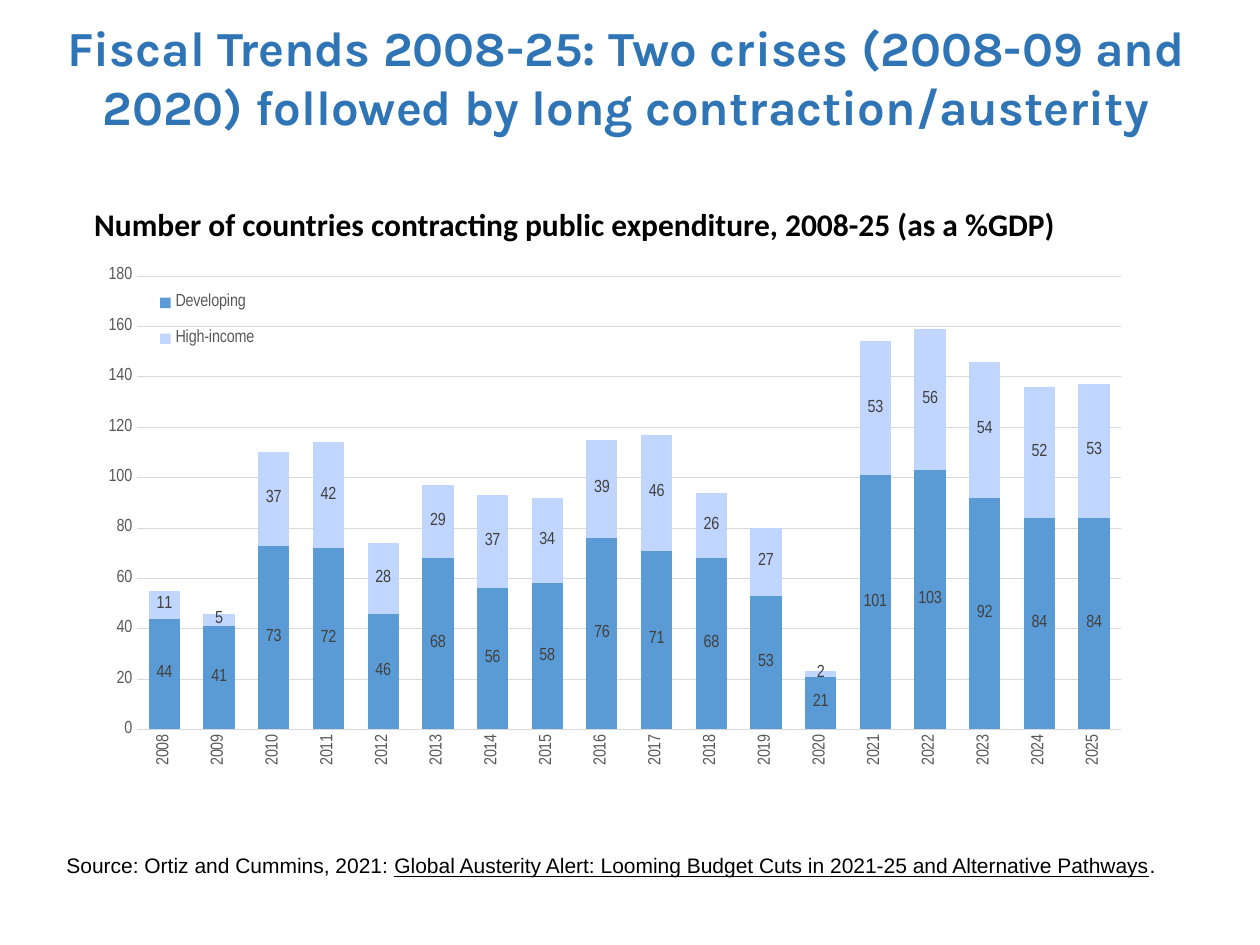
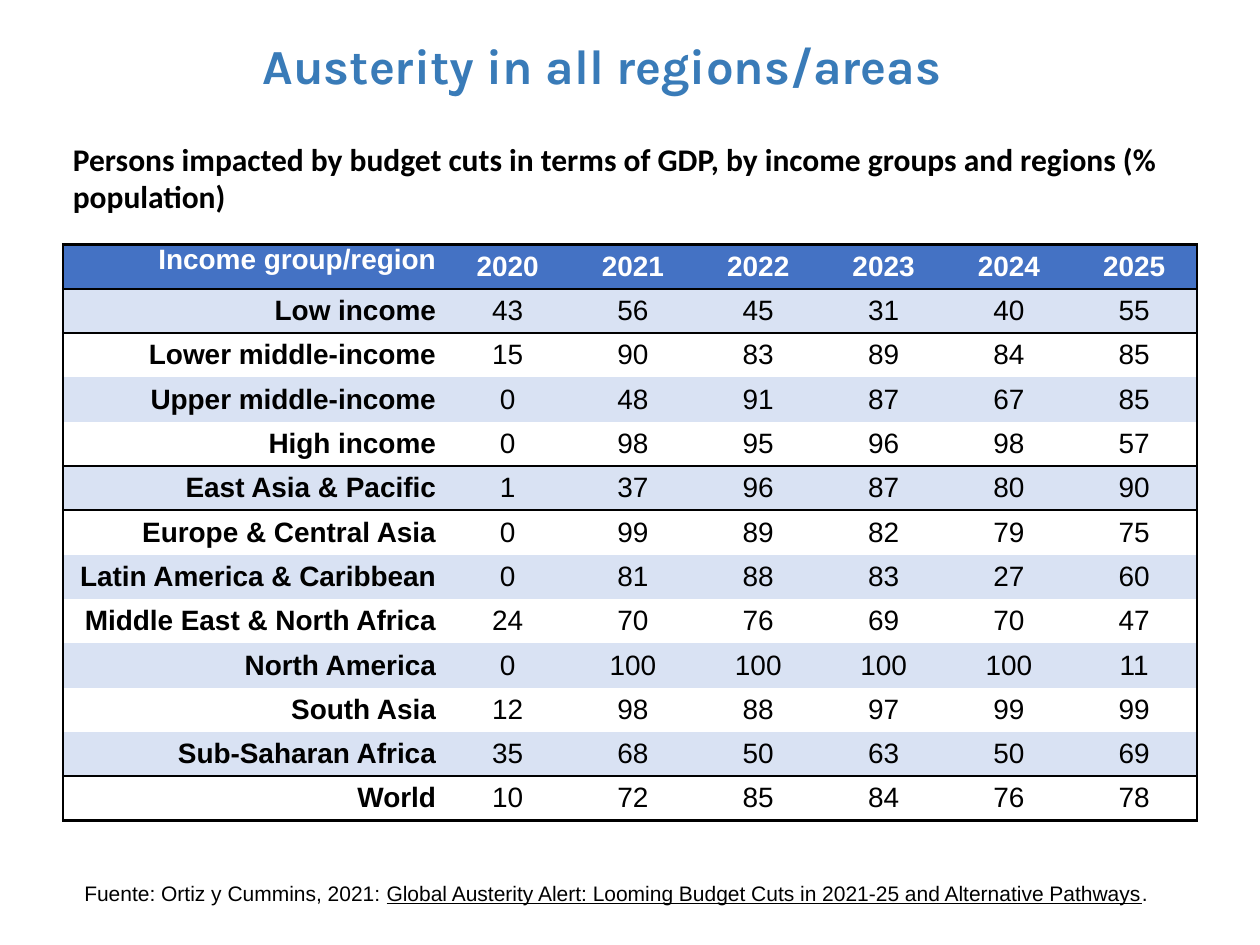
from lxml.etree import SubElement
from pptx import Presentation
from pptx.chart.data import CategoryChartData
from pptx.dml.color import RGBColor
from pptx.enum.chart import XL_CHART_TYPE as ChartType
from pptx.enum.chart import XL_LEGEND_POSITION as LegendSpot
from pptx.enum.chart import XL_TICK_MARK as TickMark
from pptx.enum.text import MSO_ANCHOR as Anchor
from pptx.enum.text import PP_ALIGN as Align
from pptx.oxml import parse_xml
from pptx.oxml.ns import nsdecls, qn
from pptx.util import Cm, Pt

BLACK = RGBColor(0x00, 0x00, 0x00)
WHITE = RGBColor(0xFF, 0xFF, 0xFF)
TITLE_BLUE = RGBColor(0x2F, 0x75, 0xB5)
SOFT_TITLE_BLUE = RGBColor(0x39, 0x7B, 0xB8)
HEADER_BLUE = RGBColor(0x44, 0x72, 0xC4)
BAND_BLUE = RGBColor(0xD9, 0xE2, 0xF3)
DEVELOPING_BLUE = RGBColor(0x5B, 0x9B, 0xD5)
HIGH_INCOME_BLUE = RGBColor(0xC1, 0xD6, 0xFF)
AXIS_GREY = RGBColor(0x59, 0x59, 0x59)
LABEL_GREY = RGBColor(0x40, 0x40, 0x40)
GRID_GREY = RGBColor(0xD9, 0xD9, 0xD9)

TITLE_FONT, SUBTITLE_FONT = "Karla", "Calibri"
BODY_FONT, CHART_FONT = "Arial", "Arial Narrow"

REPORT = ("Global Austerity Alert: Looming Budget Cuts in 2021-25 "
          "and Alternative Pathways")

YEARS = [str(year) for year in range(2008, 2026)]
CONTRACTIONS = [
    ("Developing", DEVELOPING_BLUE,
     (44, 41, 73, 72, 46, 68, 56, 58, 76, 71, 68, 53, 21, 101, 103, 92, 84, 84)),
    ("High-income", HIGH_INCOME_BLUE,
     (11, 5, 37, 42, 28, 29, 37, 34, 39, 46, 26, 27, 2, 53, 56, 54, 52, 53)),
]

IMPACT_ROWS = [
    ("Income group/region", 2020, 2021, 2022, 2023, 2024, 2025),
    ("Low income", 43, 56, 45, 31, 40, 55),
    ("Lower middle-income", 15, 90, 83, 89, 84, 85),
    ("Upper middle-income", 0, 48, 91, 87, 67, 85),
    ("High income", 0, 98, 95, 96, 98, 57),
    ("East Asia & Pacific", 1, 37, 96, 87, 80, 90),
    ("Europe & Central Asia", 0, 99, 89, 82, 79, 75),
    ("Latin America & Caribbean", 0, 81, 88, 83, 27, 60),
    ("Middle East & North Africa", 24, 70, 76, 69, 70, 47),
    ("North America", 0, 100, 100, 100, 100, 11),
    ("South Asia", 12, 98, 88, 97, 99, 99),
    ("Sub-Saharan Africa", 35, 68, 50, 63, 50, 69),
    ("World", 10, 72, 85, 84, 76, 78),
]
RULED_ROWS = {0, 4, 11, 12}  # rows with a line beneath
NO_STYLE = "{2D5ABB26-0587-4C30-8999-92F81FD0307C}"


# Shared text parts
def style_font(font, name, size, colour, bold=False):
    font.name, font.size, font.bold = name, Pt(size), bold
    font.color.rgb = colour


def add_span(para, text, *style, **options):
    span = para.add_run()
    span.text = text
    style_font(span.font, *style, **options)
    return span


def add_text_box(page, box):
    frame = page.shapes.add_textbox(*map(Cm, box)).text_frame
    frame.word_wrap = True
    return frame


def add_title(page, box, text, colour):
    frame = add_text_box(page, box)
    frame.vertical_anchor = Anchor.MIDDLE
    para = frame.paragraphs[0]
    para.alignment = Align.CENTER
    add_span(para, text, TITLE_FONT, 28, colour, bold=True)


def add_subtitle(page, box, text):
    para = add_text_box(page, box).paragraphs[0]
    add_span(para, text, SUBTITLE_FONT, 18, BLACK, bold=True)


def add_source(page, box, lead):
    para = add_text_box(page, box).paragraphs[0]
    for text, underlined in ((lead, False), (REPORT, True), (".", False)):
        add_span(para, text, BODY_FONT, 12, BLACK).font.underline = underlined


# Chart of contracting countries
def place_manually(parent, x, y, width, height, inner=False):
    """Give a plot area or legend a fixed place, as fractions of the chart."""
    for old in parent.findall(qn("c:layout")):
        parent.remove(old)
    layout = parse_xml(f"<c:layout {nsdecls('c')}><c:manualLayout/></c:layout>")
    manual = layout[0]
    settings = [("layoutTarget", "inner")] if inner else []
    settings += [("xMode", "edge"), ("yMode", "edge"),
                 ("x", x), ("y", y), ("w", width), ("h", height)]
    for tag, value in settings:
        SubElement(manual, qn(f"c:{tag}")).set("val", str(value))
    parent.insert(0 if inner else 1, layout)


def style_axes(chart):
    for axis in (chart.category_axis, chart.value_axis):
        axis.major_tick_mark = axis.minor_tick_mark = TickMark.NONE
        style_font(axis.tick_labels.font, CHART_FONT, 10, AXIS_GREY)
    years, counts = chart.category_axis, chart.value_axis
    years.format.line.color.rgb = GRID_GREY
    years.format.line.width = Pt(0.75)
    years.tick_labels.font._element.getparent().getparent().getparent() \
        .find(qn("a:bodyPr")).set("rot", "-5400000")
    counts.minimum_scale, counts.maximum_scale, counts.major_unit = 0, 180, 20
    counts.format.line.fill.background()
    counts.tick_labels.number_format = "0"
    counts.tick_labels.number_format_is_linked = False
    counts.major_gridlines.format.line.color.rgb = GRID_GREY
    counts.major_gridlines.format.line.width = Pt(0.25)


def add_contraction_chart(page, box):
    data = CategoryChartData(number_format="0")
    data.categories = YEARS
    for name, _, values in CONTRACTIONS:
        data.add_series(name, values)
    chart = page.shapes.add_chart(ChartType.COLUMN_STACKED, *map(Cm, box), data).chart
    style_font(chart.font, CHART_FONT, 10, BLACK)
    chart.has_title = False
    style_axes(chart)

    plot = chart.plots[0]
    plot.gap_width, plot.overlap, plot.vary_by_categories = 75, 100, False
    for series, (_, colour, _) in zip(plot.series, CONTRACTIONS):
        series.format.fill.solid()
        series.format.fill.fore_color.rgb = colour
        labels = series.data_labels
        labels.show_value = True
        labels.number_format, labels.number_format_is_linked = "0", False
        style_font(labels.font, CHART_FONT, 10, LABEL_GREY)

    chart.has_legend = True
    legend = chart.legend
    legend.position, legend.include_in_layout = LegendSpot.BOTTOM, False
    style_font(legend.font, CHART_FONT, 10, AXIS_GREY)
    place_manually(legend._element, 0.06, 0.04, 0.13, 0.16)
    plot_area = chart._chartSpace.chart.plotArea
    place_manually(plot_area, 0.059, 0.042, 0.927, 0.791, inner=True)


# Table of people impacted
def add_borders(cell, sides):
    properties = cell._tc.get_or_add_tcPr()
    for index, side in enumerate(sides):
        properties.insert(index, parse_xml(
            f'<a:ln{side} {nsdecls("a")} w="{Pt(1.5)}"><a:solidFill>'
            f'<a:srgbClr val="{BLACK}"/></a:solidFill></a:ln{side}>'))


def fill_cell(cell, row, column, value):
    header, label = row == 0, column == 0
    cell.margin_left = cell.margin_right = Cm(0.18)
    cell.margin_top = cell.margin_bottom = 0
    cell.vertical_anchor = Anchor.TOP if header and label else Anchor.MIDDLE
    para = cell.text_frame.paragraphs[0]
    para.alignment = Align.RIGHT if label else Align.CENTER
    add_span(para, str(value), BODY_FONT, 16, WHITE if header else BLACK,
             bold=header or label)
    if header or row % 2:
        cell.fill.solid()
        cell.fill.fore_color.rgb = HEADER_BLUE if header else BAND_BLUE
    else:
        cell.fill.background()
    edges = (("L", label), ("R", column == len(IMPACT_ROWS[0]) - 1),
             ("T", header or row - 1 in RULED_ROWS), ("B", row in RULED_ROWS))
    add_borders(cell, [side for side, drawn in edges if drawn])


def add_impact_table(page, box, label_width):
    left, top, width, height = map(Cm, box)
    row_count, column_count = len(IMPACT_ROWS), len(IMPACT_ROWS[0])
    table = page.shapes.add_table(row_count, column_count,
                                  left, top, width, height).table
    table._tbl.tblPr.find(qn("a:tableStyleId")).text = NO_STYLE
    table.first_row = table.horz_banding = False
    year_width = (width - Cm(label_width)) // (column_count - 1)
    for index, column in enumerate(table.columns):
        column.width = year_width if index else Cm(label_width)
    for row, values in enumerate(IMPACT_ROWS):
        for column, value in enumerate(values):
            fill_cell(table.cell(row, column), row, column, value)


# Slides
def build_trends_page(page):
    add_title(page, (0.41, 0.66, 24.41, 1.75),
              "Fiscal Trends 2008-25: Two crises (2008-09 and 2020) "
              "followed by long contraction/austerity", TITLE_BLUE)
    add_source(page, (1.09, 17.07, 22.5, 0.76), "Source: Ortiz and Cummins, 2021: ")
    add_subtitle(page, (1.65, 4.01, 22.1, 1.02),
                 "Number of countries contracting public expenditure, "
                 "2008-25 (as a %GDP)")
    add_contraction_chart(page, (1.5, 5.08, 21.41, 11.56))


def build_regions_page(page):
    add_title(page, (0.2, 0.43, 23.87, 1.75),
              "Austerity in all regions/areas", SOFT_TITLE_BLUE)
    add_subtitle(page, (1.22, 2.69, 23.27, 1.8),
                 "Persons impacted by budget cuts in terms of GDP, "
                 "by income groups and regions (% population)")
    add_source(page, (1.45, 17.63, 22.5, 0.76), "Fuente: Ortiz y Cummins, 2021: ")
    add_impact_table(page, (1.27, 4.93, 22.86, 11.61), 7.7)


def main():
    deck = Presentation()
    deck.slide_width, deck.slide_height = Cm(25.4), Cm(19.05)
    blank = deck.slide_layouts[6]
    for build_page in (build_trends_page, build_regions_page):
        build_page(deck.slides.add_slide(blank))
    deck.save("out.pptx")


if __name__ == "__main__":
    main()
